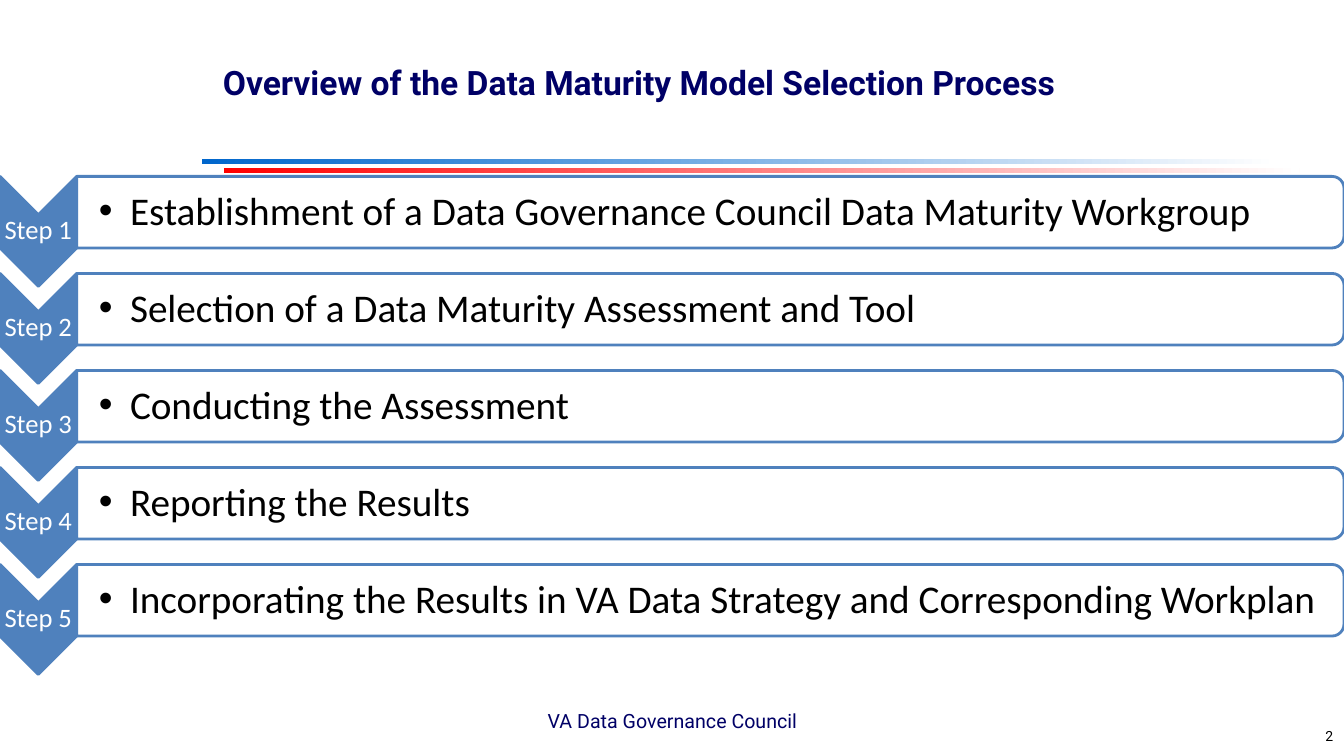
from dataclasses import dataclass

from lxml import etree
from pptx import Presentation
from pptx.dml.color import RGBColor
from pptx.enum.shapes import MSO_SHAPE
from pptx.enum.text import MSO_ANCHOR, PP_ALIGN
from pptx.oxml.ns import qn
from pptx.util import Inches, Pt

RECT = MSO_SHAPE.RECTANGLE
CHEVRON = MSO_SHAPE.CHEVRON
ROUND_TOP = MSO_SHAPE.ROUND_2_SAME_RECTANGLE
MIDDLE = MSO_ANCHOR.MIDDLE
LEFT, CENTER, RIGHT = PP_ALIGN.LEFT, PP_ALIGN.CENTER, PP_ALIGN.RIGHT


@dataclass(frozen=True)
class Theme:
    heading_font: str = "Roboto"
    body_font: str = "Calibri"
    navy: str = "000066"
    steel: str = "4F81BD"
    blue: str = "0066CC"
    red: str = "FF0000"
    white: str = "FFFFFF"
    black: str = "000000"
    title_size: int = 24
    label_size: int = 19
    step_size: int = 28
    footer_size: int = 14
    number_size: int = 10
    line_width: int = 2


THEME = Theme()
STEPS = [
    "Establishment of a Data Governance Council Data Maturity Workgroup",
    "Selection of a Data Maturity Assessment and Tool",
    "Conducting the Assessment",
    "Reporting the Results",
    "Incorporating the Results in VA Data Strategy and Corresponding Workplan",
]
FIRST_TOP = 1.75
PITCH = 3.85 / 4
CHEVRON_W, CHEVRON_H = 0.76, 1.09
BAR_W, BAR_H = 12.57, 0.71


def rgb(color):
    return RGBColor.from_string(color)


def place(sp, left, top, width, height):
    sp.left, sp.top = Inches(left), Inches(top)
    sp.width, sp.height = Inches(width), Inches(height)


def write(sp, text, font, size, color, align=LEFT, bold=False):
    tf = sp.text_frame
    tf.word_wrap = True
    tf.vertical_anchor = MIDDLE
    p = tf.paragraphs[0]
    p.alignment = align
    r = p.add_run()
    r.text = text
    r.font.name = font
    r.font.size = Pt(size)
    r.font.bold = bold
    r.font.color.rgb = rgb(color)
    return p


def add_text(s, box, *args, insets=None, **kwargs):
    """Add a text box; insets are left, top, right and bottom in inches."""
    sp = s.shapes.add_textbox(*map(Inches, box))
    p = write(sp, *args, **kwargs)
    if insets:
        tf = sp.text_frame
        tf.margin_left, tf.margin_top, tf.margin_right, tf.margin_bottom = map(Inches, insets)
    return p


def add_rule(s, left, top, color):
    """Add a thin bar that fades from color to white."""
    sp = s.shapes.add_shape(RECT, *map(Inches, (left, top, 10.67, 0.05)))
    sp.shadow.inherit = False
    sp.line.fill.background()
    sp.fill.gradient()
    sp.fill.gradient_angle = 0
    for stop, stop_color in zip(sp.fill.gradient_stops, (color, THEME.white)):
        stop.color.rgb = rgb(stop_color)


def add_turned(s, kind, left, top, width, height, fill):
    """Add a shape turned by 90 degrees that shows in the given box."""
    sp = s.shapes.add_shape(kind, 0, 0, 0, 0)
    shift = (width - height) / 2
    place(sp, left + shift, top - shift, height, width)
    sp.rotation = 90
    sp.shadow.inherit = False
    sp.fill.solid()
    sp.fill.fore_color.rgb = rgb(fill)
    sp.line.color.rgb = rgb(THEME.steel)
    sp.line.width = Pt(THEME.line_width)
    return sp


def set_opacity(sp, percent):
    color = sp.fill._xPr.find(qn("a:solidFill"))[0]
    etree.SubElement(color, qn("a:alpha"), val=str(percent * 1000))


def add_bullet(p, indent):
    pPr = p._p.get_or_add_pPr()
    pPr.set("marL", str(Inches(indent)))
    pPr.set("indent", str(-Inches(indent)))
    etree.SubElement(pPr, qn("a:buFont"), typeface="Arial")
    etree.SubElement(pPr, qn("a:buChar"), char="•")


def add_step(s, number, text, top):
    add_turned(s, CHEVRON, 0, top, CHEVRON_W, CHEVRON_H, THEME.steel)
    p = add_text(s, (0, top + 0.38, CHEVRON_W, 0.33), f"Step {number}",
                 THEME.body_font, THEME.label_size, THEME.white, CENTER,
                 insets=(0.01, 0.01, 0.01, 0.01))
    p.line_spacing = 0.9

    bar = add_turned(s, ROUND_TOP, CHEVRON_W, top, BAR_W, BAR_H, THEME.white)
    set_opacity(bar, 90)
    p = add_text(s, (CHEVRON_W, top + 0.04, 12.53, 0.64), text,
                 THEME.body_font, THEME.step_size, THEME.black,
                 insets=(0.22, 0.02, 0.02, 0.02))
    p.line_spacing = 0.9
    add_bullet(p, 0.31)


def main():
    prs = Presentation()
    prs.slide_width, prs.slide_height = Inches(13.33), Inches(7.5)
    s = prs.slides.add_slide(prs.slide_layouts[5])

    add_rule(s, 2, 1.58, THEME.blue)
    add_rule(s, 2.22, 1.67, THEME.red)

    title = s.shapes.title
    place(title, 2.11, 0, 11.22, 1.63)
    write(title, "Overview of the Data Maturity Model Selection Process",
          THEME.heading_font, THEME.title_size, THEME.navy, bold=True)

    for i, text in enumerate(STEPS):
        add_step(s, i + 1, text, FIRST_TOP + i * PITCH)

    add_text(s, (10.21, 7.1, 3.11, 0.4), "2",
             THEME.heading_font, THEME.number_size, THEME.black, RIGHT)
    add_text(s, (4.56, 6.95, 4.22, 0.4), "VA Data Governance Council",
             THEME.heading_font, THEME.footer_size, THEME.navy, CENTER)
    prs.save("out.pptx")


if __name__ == "__main__":
    main()
